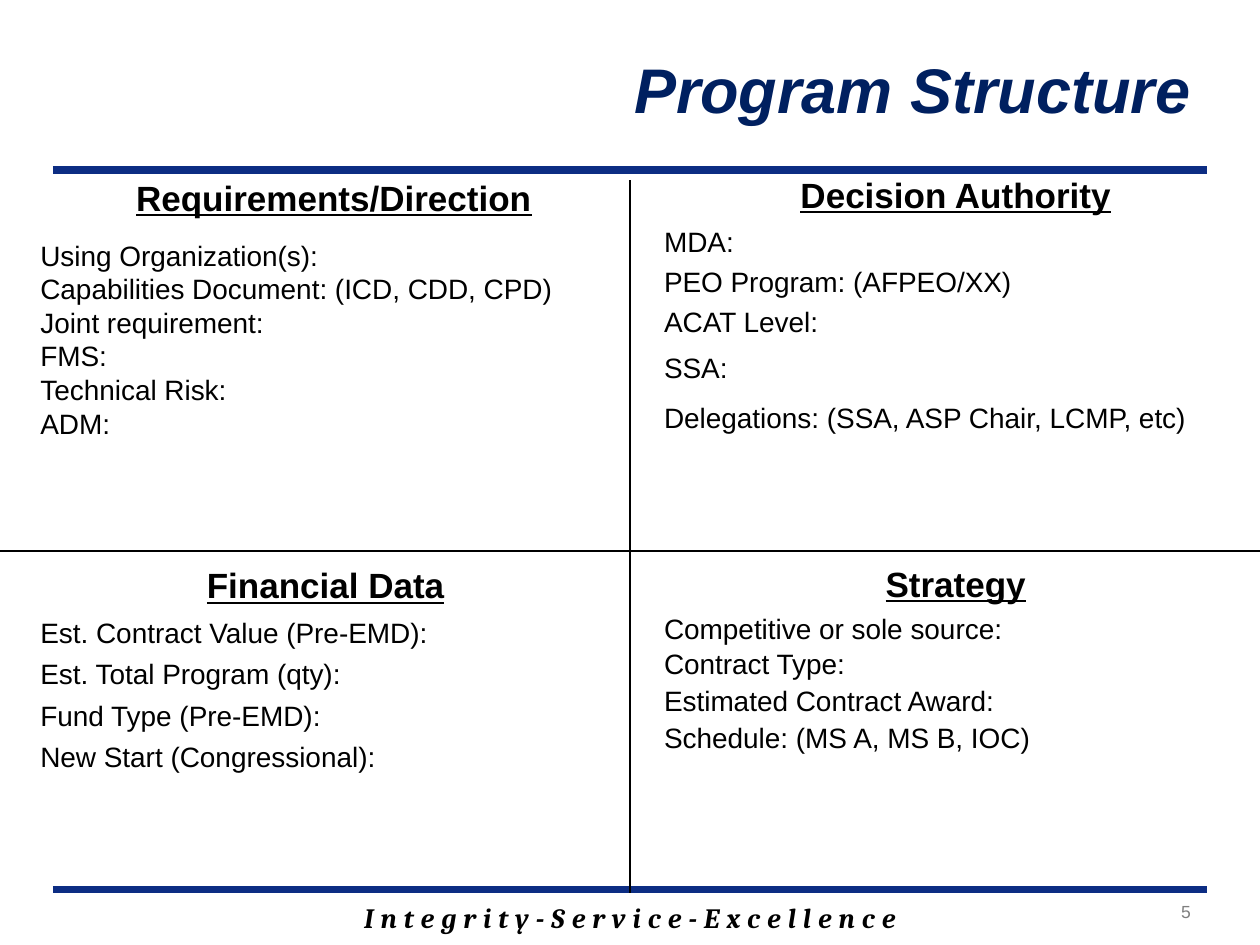
from lxml.etree import SubElement
from pptx import Presentation
from pptx.dml.color import RGBColor
from pptx.enum.shapes import MSO_CONNECTOR
from pptx.enum.text import MSO_ANCHOR, MSO_AUTO_SIZE, PP_ALIGN
from pptx.oxml.ns import qn
from pptx.util import Inches, Pt

WIDTH, HEIGHT = Inches(10), Inches(7.5)
LINE_HEIGHT = 18.4
NAVY, BLUE, BLACK, GRAY = "002060", "0C2D83", "000000", "7F7F7F"
LEFT, RIGHT = 2.2, 51.7

# Each row: text, line spacing, space before and after as shares of a line
QUADRANTS = [
    (LEFT, 18, 48.6, 29.6, ("Requirements/Direction", 1), [
        ("Using Organization(s):", 0.8, 0.82, 0),
        ("Capabilities Document: (ICD, CDD, CPD)", 1, 0, 0),
        ("Joint requirement:", 1, 0, 0),
        ("FMS:", 1, 0, 0),
        ("Technical Risk:", 1, 0, 0),
        ("ADM:", 1, 0, 0)]),
    (RIGHT, 18.53, 48.3, 35.87, ("Decision Authority", 0.8), [
        ("MDA:", 0.8, 0.5, 0),
        ("PEO Program: (AFPEO/XX)", 1, 0.2, 0),
        ("ACAT Level:", 1, 0.2, 0),
        ("SSA:", 1, 0.4, 0),
        ("Delegations: (SSA, ASP Chair, LCMP, etc)", 1, 0.5, 0)]),
    (LEFT, 59.87, 47.3, 22.93, ("Financial Data", 0.8), [
        ("Est. Contract Value (Pre-EMD):", 0.8, 0.5, 0),
        ("Est. Total Program (qty):", 1, 0.25, 0),
        ("Fund Type (Pre-EMD):", 1, 0.25, 0),
        ("New Start (Congressional):", 1, 0.25, 0)]),
    (RIGHT, 59.33, 48.3, 24.8, ("Strategy", 0.9), [
        ("Competitive or sole source:", 0.7, 0.5, 0.2),
        ("Contract Type:", 0.9, 0, 0),
        ("Estimated Contract Award:", 0.9, 0.2, 0),
        ("Schedule: (MS A, MS B, IOC)", 0.9, 0.2, 0)]),
]


def color(value):
    return RGBColor.from_string(value)


def across(share):
    return round(WIDTH * share / 100)


def down(share):
    return round(HEIGHT * share / 100)


def place(sp, x, y, w, h):
    sp.left, sp.top, sp.width, sp.height = across(x), down(y), across(w), down(h)
    tf = sp.text_frame
    tf.word_wrap = True
    tf.auto_size = MSO_AUTO_SIZE.NONE
    tf.vertical_anchor = MSO_ANCHOR.TOP
    return tf


def write(p, text, size, align=PP_ALIGN.LEFT, fill=BLACK, font="Arial",
          bold=False, italic=False, underline=False, spacing=1, before=0, after=0):
    p.text = text
    p.alignment = align
    p.line_spacing = spacing
    p.space_before, p.space_after = Pt(before), Pt(after)
    for r in p.runs:
        f = r.font
        f.name, f.size = font, Pt(size)
        f.bold, f.italic, f.underline = bold, italic, underline
        f.color.rgb = color(fill)


def remove_bullet(p):
    pPr = p._p.get_or_add_pPr()
    pPr.set("marL", "0")
    pPr.set("indent", "0")
    SubElement(pPr, qn("a:buNone"))


def add_line(s, x1, y1, x2, y2, fill, weight):
    line = s.shapes.add_connector(
        MSO_CONNECTOR.STRAIGHT, across(x1), down(y1), across(x2), down(y2))
    line.line.color.rgb = color(fill)
    line.line.width = Pt(weight)
    SubElement(line._element.spPr, qn("a:effectLst"))


def add_text(s, x, y, w, h, text, size, **style):
    sp = s.shapes.add_textbox(0, 0, 0, 0)
    p = place(sp, x, y, w, h).paragraphs[0]
    write(p, text, size, **style)
    return p


def fill_quadrant(sp, x, y, w, h, heading, rows):
    tf = place(sp, x, y, w, h)
    title, spacing = heading
    write(tf.paragraphs[0], title, 20, PP_ALIGN.CENTER, bold=True,
          underline=True, spacing=spacing)
    for text, spacing, before, after in rows:
        write(tf.add_paragraph(), text, 16, spacing=spacing,
              before=before * LINE_HEIGHT, after=after * LINE_HEIGHT)
    for p in tf.paragraphs:
        remove_bullet(p)


def add_footer(s):
    p = add_text(s, 14.2, 94.67, 71.7, 4.93,
                 "I n t e g r i t y - S e r v i c e - E x c e l l e n c e", 16,
                 align=PP_ALIGN.CENTER, font="Cambria", bold=True, italic=True)
    p.runs[0]._r.get_or_add_rPr().set("spc", "25")
    add_text(s, 83, 94.67, 12.5, 4.4, "5", 10, align=PP_ALIGN.RIGHT, fill=GRAY)


def main():
    prs = Presentation()
    prs.slide_width, prs.slide_height = WIDTH, HEIGHT
    s = prs.slides.add_slide(prs.slide_layouts.get_by_name("Comparison"))
    title, *bodies = s.placeholders
    tf = place(title, 19.9, 4.67, 75.6, 9.47)
    write(tf.paragraphs[0], "Program Structure", 36, PP_ALIGN.RIGHT, NAVY,
          bold=True, italic=True)
    for sp, quadrant in zip(bodies, QUADRANTS):
        fill_quadrant(sp, *quadrant)
    for y in (18, 94.13):
        add_line(s, 4.2, y, 95.8, y, BLUE, 4.5)
    add_line(s, 50, 19.07, 50, 94.53, BLACK, 1.25)
    add_line(s, 0, 58.27, 100, 58.27, BLACK, 1.25)
    add_footer(s)
    prs.save("out.pptx")


if __name__ == "__main__":
    main()
